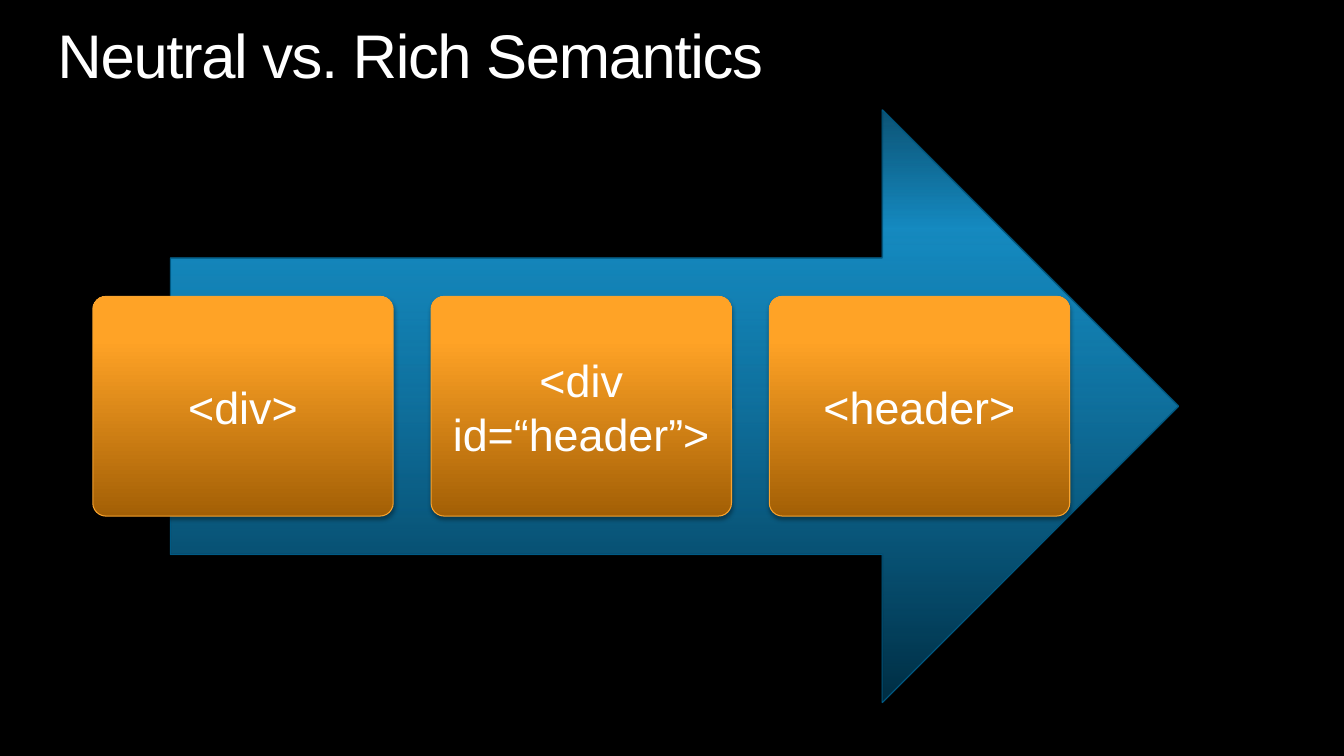
from lxml import etree
from pptx import Presentation
from pptx.dml.color import RGBColor
from pptx.enum import shapes, text
from pptx.oxml.ns import qn
from pptx.util import Inches, Pt

FONT = "Arial"
COLORS = {
    "background": "000000",
    "text": "FFFFFF",
    "shadow": "000000",
    "arrow_dark": "002D42",
    "arrow_light": "1CB7FF",
    "arrow_line": "005A84",
    "card_dark": "A35F05",
    "card_light": "FFA326",
    "card_line": "F9A32E",
}
# Gradient stops from bottom to top: position %, colour, opacity %
ARROW_STOPS = [(0, "arrow_dark", 100), (80, "arrow_light", 75), (100, "arrow_light", 45)]
CARD_STOPS = [(0, "card_dark", 100), (80, "card_light", 100), (100, "card_light", 100)]
CARD_LABELS = ["<div>", "<div id=“header”>", "<header>"]
CARD_LEFT, CARD_STEP = 0.92, 3.355


def rgb(name):
    return RGBColor.from_string(COLORS[name])


def add_color(parent, name, opacity):
    color = etree.SubElement(parent, qn("a:srgbClr"), val=COLORS[name])
    etree.SubElement(color, qn("a:alpha"), val=str(opacity * 1000))


def set_gradient(shape, stops):
    shape.fill.gradient()
    shape.fill.gradient_angle = 90
    stop_list = shape._element.spPr.find(".//" + qn("a:gsLst"))
    for stop in list(stop_list):
        stop_list.remove(stop)
    for position, name, opacity in stops:
        stop = etree.SubElement(stop_list, qn("a:gs"), pos=str(position * 1000))
        add_color(stop, name, opacity)


def set_shadow(shape):
    shape.shadow.inherit = False
    effects = shape._element.spPr.find(qn("a:effectLst"))
    shadow = etree.SubElement(
        effects, qn("a:outerShdw"), blurRad=str(Pt(3.1)), dist=str(Pt(1.8)),
        dir="5400000", rotWithShape="0")
    add_color(shadow, "shadow", 35)


def add_glossy_shape(slide, kind, box, stops, line):
    shape = slide.shapes.add_shape(kind, *map(Inches, box))
    set_gradient(shape, stops)
    shape.line.color.rgb = rgb(line)
    shape.line.width = Pt(0.75)
    set_shadow(shape)
    return shape


def style_font(paragraph, size):
    paragraph.font.name = FONT
    paragraph.font.size = Pt(size)
    paragraph.font.color.rgb = rgb("text")


def add_title(slide, wording):
    box = slide.shapes.add_textbox(*map(Inches, (0.57, 0.25, 12.19, 0.67)))
    frame = box.text_frame
    frame.word_wrap = True
    frame.margin_left = frame.margin_right = frame.margin_top = frame.margin_bottom = 0
    paragraph = frame.paragraphs[0]
    paragraph.text = wording
    paragraph.line_spacing = 0.9
    style_font(paragraph, 44)
    # Tighten letter spacing by one point
    paragraph.runs[0].font._element.set("spc", "-100")


def add_card(slide, left, label):
    card = add_glossy_shape(slide, shapes.MSO_SHAPE.ROUNDED_RECTANGLE,
                            (left, 2.94, 2.98, 2.18), CARD_STOPS, "card_line")
    card.adjustments[0] = 0.06
    frame = card.text_frame
    frame.word_wrap = True
    frame.vertical_anchor = text.MSO_ANCHOR.MIDDLE
    paragraph = frame.paragraphs[0]
    paragraph.text = label
    paragraph.alignment = text.PP_ALIGN.CENTER
    style_font(paragraph, 32)


def main():
    presentation = Presentation()
    presentation.slide_width = Inches(13.33)
    presentation.slide_height = Inches(7.5)
    slide = presentation.slides.add_slide(presentation.slide_layouts[6])
    slide.background.fill.solid()
    slide.background.fill.fore_color.rgb = rgb("background")

    add_title(slide, "Neutral vs. Rich Semantics")

    # Arrow from neutral to rich, with the cards across it
    add_glossy_shape(slide, shapes.MSO_SHAPE.RIGHT_ARROW,
                     (1.69, 1.09, 10, 5.88), ARROW_STOPS, "arrow_line")
    for index, label in enumerate(CARD_LABELS):
        add_card(slide, CARD_LEFT + index * CARD_STEP, label)

    presentation.save("out.pptx")


if __name__ == "__main__":
    main()
